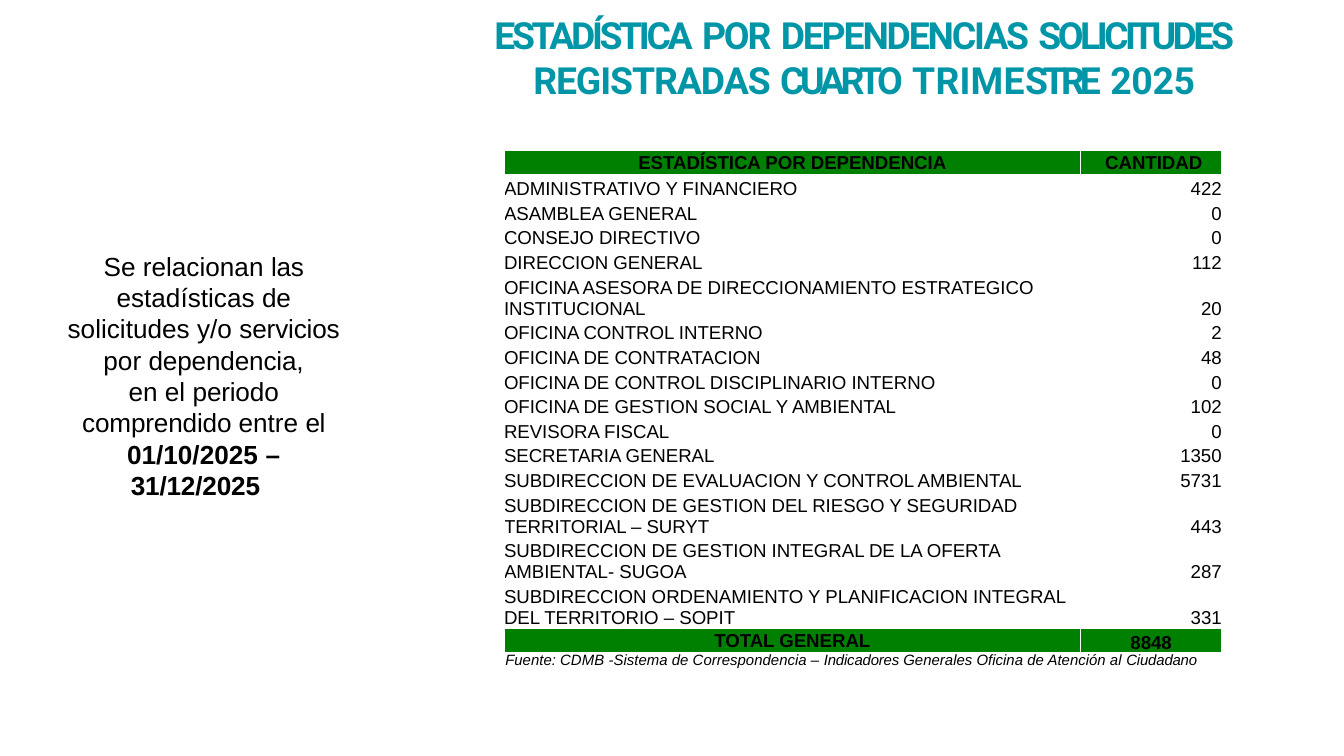
from lxml import etree
from pptx import Presentation
from pptx.dml.color import RGBColor
from pptx.enum.text import MSO_ANCHOR as ANCHOR, MSO_AUTO_SIZE as AUTO, PP_ALIGN as ALIGN
from pptx.oxml.ns import qn
from pptx.util import Inches, Pt

TEAL, GREEN, BLACK, WHITE = "0096A7", "008000", "000000", "FFFFFF"

# Words carry the tight letter spacing; the spaces between them do not.
TITLE = [
    ("ESTADÍSTICA", -1.8), (" ", 0), ("POR", -1.2), (" ", 0), ("DEPENDENCIAS", -1.2), (" ", 0),
    ("SOLICITUDES", -1.9), (" ", 0), ("REGISTRADAS", -0.6), (" ", 0), ("CUARTO", -2.4), (" ", 0),
    ("TRIME", 0.1), ("STRE", -2.7), (" ", 0), ("2025", -0.2),
]
INTRO = [
    ("Se relacionan ", 0), ("las ", -0.2), ("estadísticas ", 0), ("de ", -0.2),
    ("solicitudes y/o ", 0), ("servicios ", -0.1), ("por ", 0), ("dependencia,", -0.1),
]
PERIOD = [("en el ", 0), ("periodo comprendido ", -0.1), ("entre ", 0), ("el ", -0.3)]
START_DATE = [("01/10/2025 ", 0), ("–", -0.5)]
END_DATE = [("31/12/2025", -0.1)]
SOURCE = [
    ("Fuente: CDMB ", 0), ("-", -0.1), ("Sistema de Correspondencia – ", 0),
    ("Indicadores ", -0.1), ("Generales Oficina de Atención al ", 0), ("Ciudadano", -0.1),
]
HEADER = ("ESTADÍSTICA POR DEPENDENCIA", " CANTIDAD")
REQUESTS = [
    ("ADMINISTRATIVO Y FINANCIERO", 422),
    ("ASAMBLEA GENERAL", 0),
    ("CONSEJO DIRECTIVO", 0),
    ("DIRECCION GENERAL", 112),
    ("OFICINA ASESORA DE DIRECCIONAMIENTO ESTRATEGICO INSTITUCIONAL", 20),
    ("OFICINA CONTROL INTERNO", 2),
    ("OFICINA DE CONTRATACION", 48),
    ("OFICINA DE CONTROL DISCIPLINARIO INTERNO", 0),
    ("OFICINA DE GESTION SOCIAL Y AMBIENTAL", 102),
    ("REVISORA FISCAL", 0),
    ("SECRETARIA GENERAL", 1350),
    ("SUBDIRECCION DE EVALUACION Y CONTROL AMBIENTAL", 5731),
    ("SUBDIRECCION DE GESTION DEL RIESGO Y SEGURIDAD TERRITORIAL – SURYT", 443),
    ("SUBDIRECCION DE GESTION INTEGRAL DE LA OFERTA AMBIENTAL- SUGOA", 287),
    ("SUBDIRECCION ORDENAMIENTO Y PLANIFICACION INTEGRAL DEL TERRITORIO – SOPIT", 331),
]
TOTAL_LABEL = "TOTAL GENERAL"
COLUMN_WIDTHS = (4.29, 1.05)
TWO_LINE_HEIGHT = 0.34
ONE_LINE_CHARS = 50
INDENT = 0.01


def rgb(color):
    return RGBColor.from_string(color)


def set_margins(p, left, right=0):
    p_pr = p._p.get_or_add_pPr()
    p_pr.set("marL", str(Inches(left)))
    p_pr.set("marR", str(Inches(right)))
    p_pr.set("indent", "0")


def add_runs(p, runs, size, font="Arial", color=BLACK, bold=False, italic=False):
    """Append (text, letter spacing in points) pairs to a paragraph."""
    for text, spacing in runs:
        r = p.add_run()
        r.text = text
        r.font.name, r.font.size = font, Pt(size)
        r.font.bold, r.font.italic = bold, italic
        r.font.color.rgb = rgb(color)
        if spacing:
            r._r.get_or_add_rPr().set("spc", str(round(spacing * 100)))


def set_frame(sp, top_inset):
    tf = sp.text_frame
    tf.word_wrap = True
    tf.auto_size = AUTO.SHAPE_TO_FIT_TEXT
    tf.vertical_anchor = ANCHOR.TOP
    tf.margin_left = tf.margin_right = tf.margin_bottom = 0
    tf.margin_top = Inches(top_inset)
    return tf


def add_text_box(slide, box):
    return set_frame(slide.shapes.add_textbox(*map(Inches, box)), 0.01)


def place_title(slide, box):
    sp = slide.shapes.title
    sp.left, sp.top, sp.width, sp.height = map(Inches, box)
    p = set_frame(sp, 0).paragraphs[0]
    p.alignment = ALIGN.CENTER
    p.line_spacing = 1.0
    p.space_before = 0
    set_margins(p, INDENT)
    add_runs(p, TITLE, 20, "Roboto", TEAL, bold=True)


def add_intro(slide, box):
    tf = add_text_box(slide, box)
    intro, period, end = tf.paragraphs[0], tf.add_paragraph(), tf.add_paragraph()
    for p, right in ((intro, 0), (period, 0), (end, 0.12)):
        p.alignment = ALIGN.CENTER
        set_margins(p, INDENT, right)
    add_runs(intro, INTRO, 14)
    add_runs(period, PERIOD, 14)
    add_runs(period, START_DATE, 14, bold=True)
    add_runs(end, END_DATE, 14, bold=True)


def add_source(slide, box):
    p = add_text_box(slide, box).paragraphs[0]
    set_margins(p, INDENT)
    add_runs(p, SOURCE, 8, italic=True)


def set_borders(cell, color, width):
    tc_pr = cell._tc.get_or_add_tcPr()
    for i, side in enumerate(("a:lnL", "a:lnR", "a:lnT", "a:lnB")):
        ln = etree.Element(qn(side), w=str(Pt(width)))
        fill = etree.SubElement(ln, qn("a:solidFill"))
        etree.SubElement(fill, qn("a:srgbClr"), val=color)
        tc_pr.insert(i, ln)


def fill_cell(cell, text, align, anchor, band):
    """Write one cell; a band cell is bold on green."""
    cell.margin_left = cell.margin_right = cell.margin_top = cell.margin_bottom = 0
    cell.vertical_anchor = anchor
    if band:
        cell.fill.solid()
        cell.fill.fore_color.rgb = rgb(GREEN)
    else:
        cell.fill.background()
    set_borders(cell, WHITE, 1)
    p = cell.text_frame.paragraphs[0]
    p.alignment = align
    add_runs(p, [(text, 0)], 10, bold=band)


def add_requests_table(slide, box):
    total = (TOTAL_LABEL, sum(amount for _, amount in REQUESTS))
    rows = [HEADER, *REQUESTS, total]
    table = slide.shapes.add_table(len(rows), 2, *map(Inches, box)).table
    table.first_row = table.horz_banding = False
    for column, width in zip(table.columns, COLUMN_WIDTHS):
        column.width = Inches(width)

    wrapped = [len(label) > ONE_LINE_CHARS for label, _ in rows]
    tall = sum(wrapped)
    one_line_height = (box[3] - tall * TWO_LINE_HEIGHT) / (len(rows) - tall)
    for i, (label, amount) in enumerate(rows):
        table.rows[i].height = Inches(TWO_LINE_HEIGHT if wrapped[i] else one_line_height)
        band = i in (0, len(rows) - 1)
        aligns = (ALIGN.CENTER, ALIGN.CENTER) if band else (ALIGN.LEFT, ALIGN.RIGHT)
        label_anchor = ANCHOR.MIDDLE if band else ANCHOR.BOTTOM
        amount_anchor = ANCHOR.MIDDLE if i == 0 else ANCHOR.BOTTOM
        fill_cell(table.cell(i, 0), label, aligns[0], label_anchor, band)
        fill_cell(table.cell(i, 1), str(amount), aligns[1], amount_anchor, band)


def main():
    prs = Presentation()
    prs.slide_width = Inches(10)
    prs.slide_height = prs.slide_width * 9 // 16
    slide = prs.slides.add_slide(prs.slide_layouts[5])
    place_title(slide, (3.43, 0.09, 5.99, 1.03))
    add_source(slide, (3.75, 4.83, 5.33, 0.15))
    add_intro(slide, (0.48, 1.85, 2.06, 1.9))
    add_requests_table(slide, (3.75, 1.12, 5.33, 3.74))
    prs.save("out.pptx")


if __name__ == "__main__":
    main()
